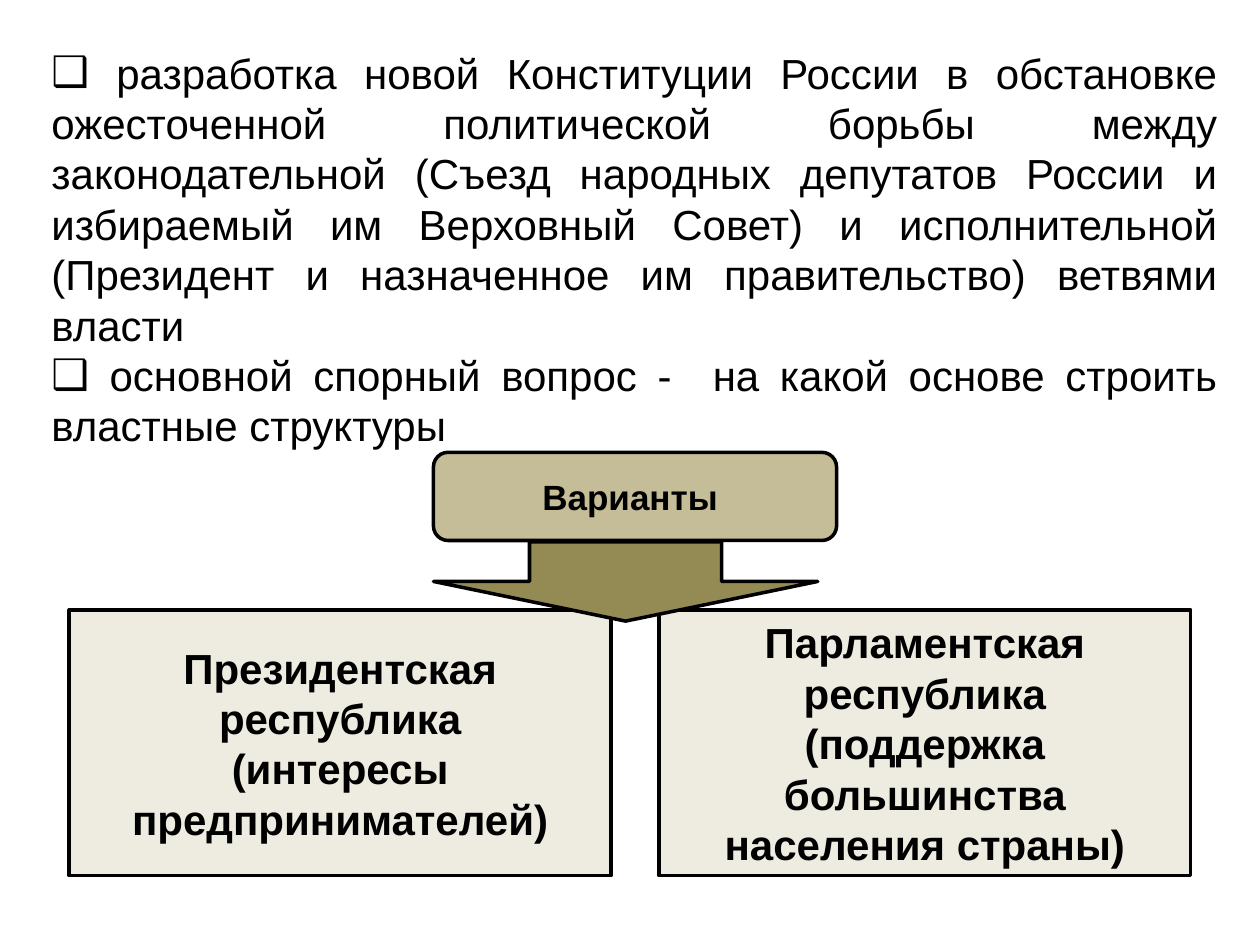
from pptx import Presentation
from pptx.dml.color import RGBColor
from pptx.enum.shapes import MSO_SHAPE
from pptx.enum.text import MSO_ANCHOR, PP_ALIGN
from pptx.oxml.ns import qn
from pptx.util import Inches, Pt
from lxml.etree import SubElement

W, H = 10, 7.5
BLACK = "000000"
THESES = [
    " разработка новой Конституции России в обстановке ожесточенной политической борьбы между "
    "законодательной (Съезд народных депутатов России и избираемый им Верховный Совет) и "
    "исполнительной (Президент и назначенное им правительство) ветвями власти",
    " основной спорный вопрос -  на какой основе строить властные структуры",
]
HEADING = ["Варианты "]
OPTIONS = [
    ["Президентская республика", "(интересы предпринимателей)"],
    ["Парламентская республика", "(поддержка большинства населения страны)"],
]
MARGIN, TOP, OPTION_H = 0.55, 4.84, 2.11
OPTION_WIDTHS = [4.3, 4.22]
HEAD_X, HEAD_Y, HEAD_W, HEAD_H = 3.44, 3.59, 3.2, 0.7


def rgb(value):
    return RGBColor.from_string(value)


def write(sp, lines, size, align, bold=False, bullet=None):
    tf = sp.text_frame
    tf.word_wrap = True
    tf.vertical_anchor = MSO_ANCHOR.MIDDLE
    for i, line in enumerate(lines):
        p = tf.add_paragraph() if i else tf.paragraphs[0]
        p.alignment = align
        if bullet:
            pPr = p._p.get_or_add_pPr()
            SubElement(pPr, qn("a:buFont")).set("typeface", "Arial")
            SubElement(pPr, qn("a:buChar")).set("char", bullet)
        r = p.add_run()
        r.text = line
        for name, value in {"name": "Arial", "size": Pt(size), "bold": bold}.items():
            setattr(r.font, name, value)
        r.font.color.rgb = rgb(BLACK)


def add_block(kind, box, fill, lines=(), size=24):
    sp = s.shapes.add_shape(kind, *map(Inches, box))
    sp.shadow.inherit = False
    sp.fill.solid()
    sp.fill.fore_color.rgb = rgb(fill)
    sp.line.color.rgb = rgb(BLACK)
    sp.line.width = Pt(2)
    write(sp, lines, size, PP_ALIGN.CENTER, bold=True)


prs = Presentation()
prs.slide_width, prs.slide_height = Inches(W), Inches(H)
s = prs.slides.add_slide(prs.slide_layouts[6])

theses = s.shapes.add_textbox(*map(Inches, (0.31, 0.31, 9.45, 3.33)))
write(theses, THESES, 24, PP_ALIGN.JUSTIFY, bullet="❑")

add_block(MSO_SHAPE.ROUNDED_RECTANGLE, (HEAD_X, HEAD_Y, HEAD_W, HEAD_H), "C4BD97", HEADING, 20)

lefts = [MARGIN, W - MARGIN - OPTION_WIDTHS[1]]
for left, width, lines in zip(lefts, OPTION_WIDTHS, OPTIONS):
    add_block(MSO_SHAPE.RECTANGLE, (left, TOP, width, OPTION_H), "EEECE1", lines)

add_block(MSO_SHAPE.DOWN_ARROW, (HEAD_X, HEAD_Y + HEAD_H + 0.01, 3.05, 0.63), "948A54")

prs.save("out.pptx")
